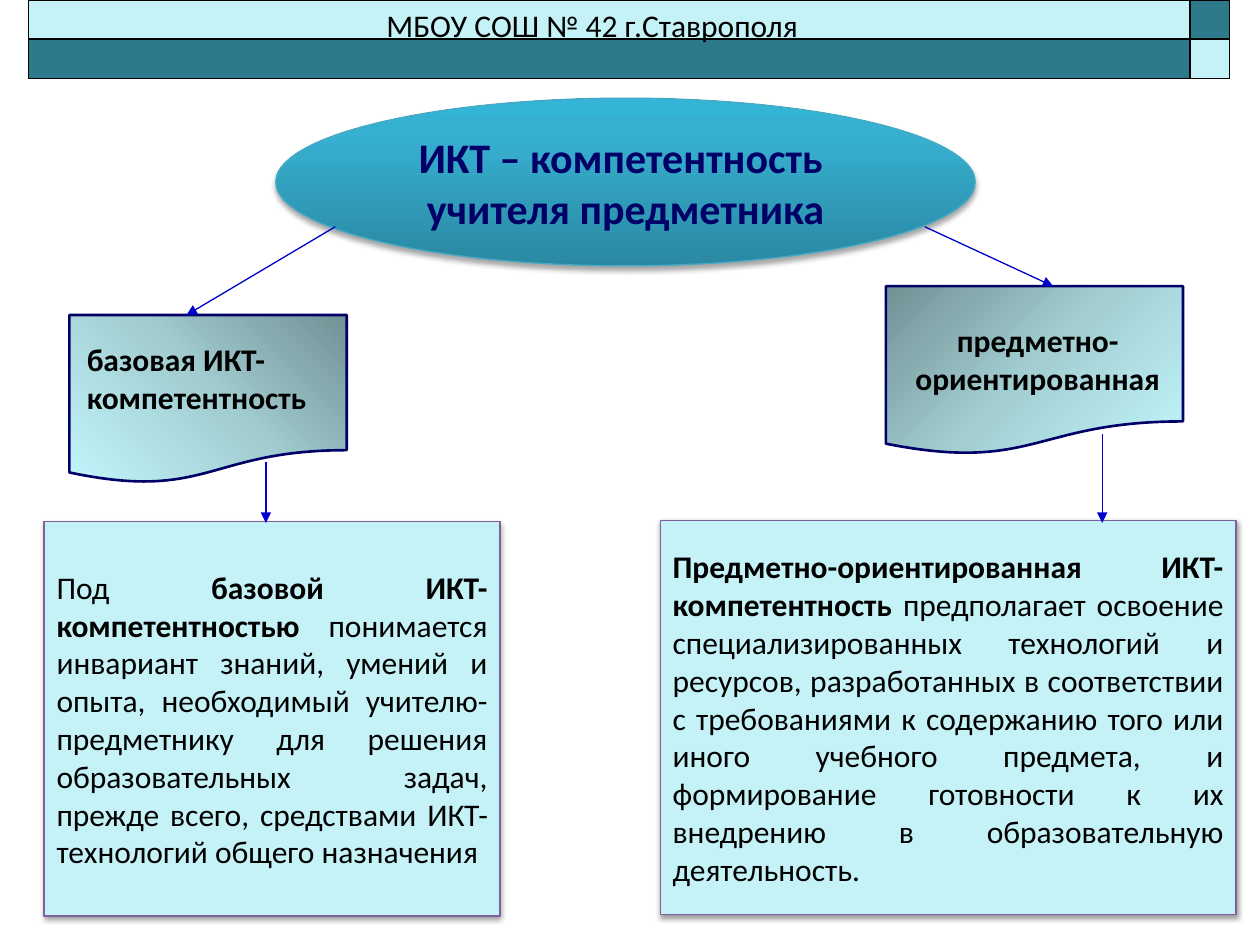
from lxml.etree import SubElement
from copy import deepcopy
from pptx import Presentation
from pptx.dml.color import RGBColor
from pptx.enum.shapes import MSO_CONNECTOR, MSO_SHAPE
from pptx.enum.text import MSO_ANCHOR, PP_ALIGN
from pptx.oxml.ns import qn
from pptx.util import Cm, Pt

# Content: boxes are (left, top, width, height) in cm
FONT = "Calibri"
PALE, TEAL, NAVY, BLACK = "C5F2F7", "2C7A8C", "000066", "000000"
SCHOOL = "МБОУ СОШ № 42 г.Ставрополя"
TOPIC = ["ИКТ – компетентность ", "учителя предметника"]
TOPIC_GRADIENT = [(0, "2A88A2"), (0.8, "37B1D2"), (1, "34B4D6")]
BRANCH_GRADIENT = [(0, "729195"), (0.5, "A3CFD3"), (1, "C1F5FB")]

BRANCHES = [
    dict(sheet=(1.4, 6.35, 5.59, 3.4), angle=225,
         label=(1.5, 6.73, 5.99, 1.78), align=PP_ALIGN.LEFT, wrap=True,
         title=["базовая ИКТ-компетентность"],
         definition=(0.89, 10.52, 9.19, 7.95),
         text=[("Под ", False), ("базовой ИКТ-компетентностью", True),
               (" понимается инвариант знаний, умений и опыта, необходимый "
                "учителю-предметнику для решения образовательных задач, прежде "
                "всего, средствами ИКТ-технологий общего назначения ", False)],
         arrows=[(6.76, 4.57, 3.76, 6.35), (5.36, 9.32, 5.36, 10.54)]),
    dict(sheet=(17.86, 5.77, 5.99, 3.4), angle=315,
         label=(17.86, 6.35, 6.12, 1.78), align=PP_ALIGN.CENTER, wrap=False,
         title=["предметно-", "ориентированная"],
         definition=(13.31, 10.49, 11.61, 7.95),
         text=[("Предметно-ориентированная ИКТ-компетентность", True),
               (" предполагает освоение специализированных технологий и "
                "ресурсов, разработанных в соответствии с требованиями к "
                "содержанию того или иного учебного предмета, и формирование "
                "готовности к их внедрению в образовательную деятельность.",
                False)],
         arrows=[(18.64, 4.57, 21.23, 5.77), (22.22, 8.74, 22.22, 10.54)]),
]

presentation = Presentation()
presentation.slide_width, presentation.slide_height = Cm(25.4), Cm(19.05)
slide = presentation.slides.add_slide(presentation.slide_layouts[6])
shapes = slide.shapes


def color(value):
    return RGBColor.from_string(value)


def set_gradient(shape, stops, angle):
    shape.fill.gradient()
    shape.fill.gradient_angle = angle
    stop_list = shape.fill._fill._gradFill.find(qn("a:gsLst"))
    stop_list.append(deepcopy(stop_list[0]))
    for stop, (position, value) in zip(shape.fill.gradient_stops, stops):
        stop.position = position
        stop.color.rgb = color(value)


def add_figure(kind, box, line, weight=0.75, fill=None):
    figure = shapes.add_shape(kind, *map(Cm, box))
    figure.shadow.inherit = False
    figure.line.color.rgb = color(line)
    figure.line.width = Pt(weight)
    if fill:
        figure.fill.solid()
        figure.fill.fore_color.rgb = color(fill)
    return figure


def add_shadow(shape, opacity, distance):
    effects = shape._element.spPr.find(qn("a:effectLst"))
    shadow = SubElement(effects, qn("a:outerShdw"), blurRad=str(Pt(3.1)),
                        dist=str(Pt(distance)), dir="5400000", rotWithShape="0")
    tint = SubElement(shadow, qn("a:srgbClr"), val=BLACK)
    SubElement(tint, qn("a:alpha"), val=str(opacity * 1000))


def write(shape, paragraphs, align, size=18, value=BLACK, bold=None,
          wrap=True, anchor=MSO_ANCHOR.MIDDLE):
    """Each paragraph is a string or a list of (text, bold) runs."""
    frame = shape.text_frame
    frame.word_wrap = wrap
    frame.vertical_anchor = anchor
    for i, content in enumerate(paragraphs):
        paragraph = frame.add_paragraph() if i else frame.paragraphs[0]
        paragraph.alignment = align
        font = paragraph.font
        font.name, font.size, font.bold = FONT, Pt(size), bold
        font.color.rgb = color(value)
        runs = [(content, None)] if isinstance(content, str) else content
        for text, run_bold in runs:
            run = paragraph.add_run()
            run.text = text
            run.font.bold = run_bold


def add_arrow(x1, y1, x2, y2):
    arrow = shapes.add_connector(MSO_CONNECTOR.STRAIGHT,
                                 Cm(x1), Cm(y1), Cm(x2), Cm(y2))
    arrow.line.color.rgb = color("0000CC")
    arrow.line.width = Pt(0.75)
    SubElement(arrow.line._get_or_add_ln(), qn("a:tailEnd"), type="triangle")
    SubElement(arrow._element.spPr, qn("a:effectLst"))


# Topic ellipse
topic = add_figure(MSO_SHAPE.OVAL, (5.56, 1.98, 14.1, 3.38), "46AAC5")
set_gradient(topic, TOPIC_GRADIENT, 90)
add_shadow(topic, 35, 1.8)
write(topic, TOPIC, PP_ALIGN.CENTER, 24, NAVY, bold=True, wrap=False)

# Two branches: titled sheet, definition, arrows
for branch in BRANCHES:
    sheet = add_figure(MSO_SHAPE.FLOWCHART_DOCUMENT, branch["sheet"], NAVY, 1.5)
    set_gradient(sheet, BRANCH_GRADIENT, branch["angle"])
    label = shapes.add_textbox(*map(Cm, branch["label"]))
    write(label, branch["title"], branch["align"], bold=True,
          wrap=branch["wrap"])
    definition = add_figure(MSO_SHAPE.RECTANGLE, branch["definition"],
                            "7D60A0", fill=PALE)
    add_shadow(definition, 38, 1.6)
    write(definition, [branch["text"]], PP_ALIGN.JUSTIFY)
    for ends in branch["arrows"]:
        add_arrow(*ends)

# Header: two bars, each with a square of the other colour at its right end
BAR_LEFT, BAR_WIDTH, BAR_HEIGHT = 0.58, 24.2, 0.79
for row, (bar, square) in enumerate([(PALE, TEAL), (TEAL, PALE)]):
    top = row * BAR_HEIGHT
    add_figure(MSO_SHAPE.RECTANGLE, (BAR_LEFT, top, BAR_WIDTH, BAR_HEIGHT),
               BLACK, fill=bar)
    add_figure(MSO_SHAPE.RECTANGLE,
               (BAR_LEFT + BAR_WIDTH - BAR_HEIGHT, top, BAR_HEIGHT, BAR_HEIGHT),
               BLACK, fill=square)
school = shapes.add_textbox(Cm(7.54), Cm(0), Cm(9.73), Cm(1.02))
write(school, [SCHOOL], PP_ALIGN.LEFT, anchor=MSO_ANCHOR.TOP)

presentation.save("out.pptx")
